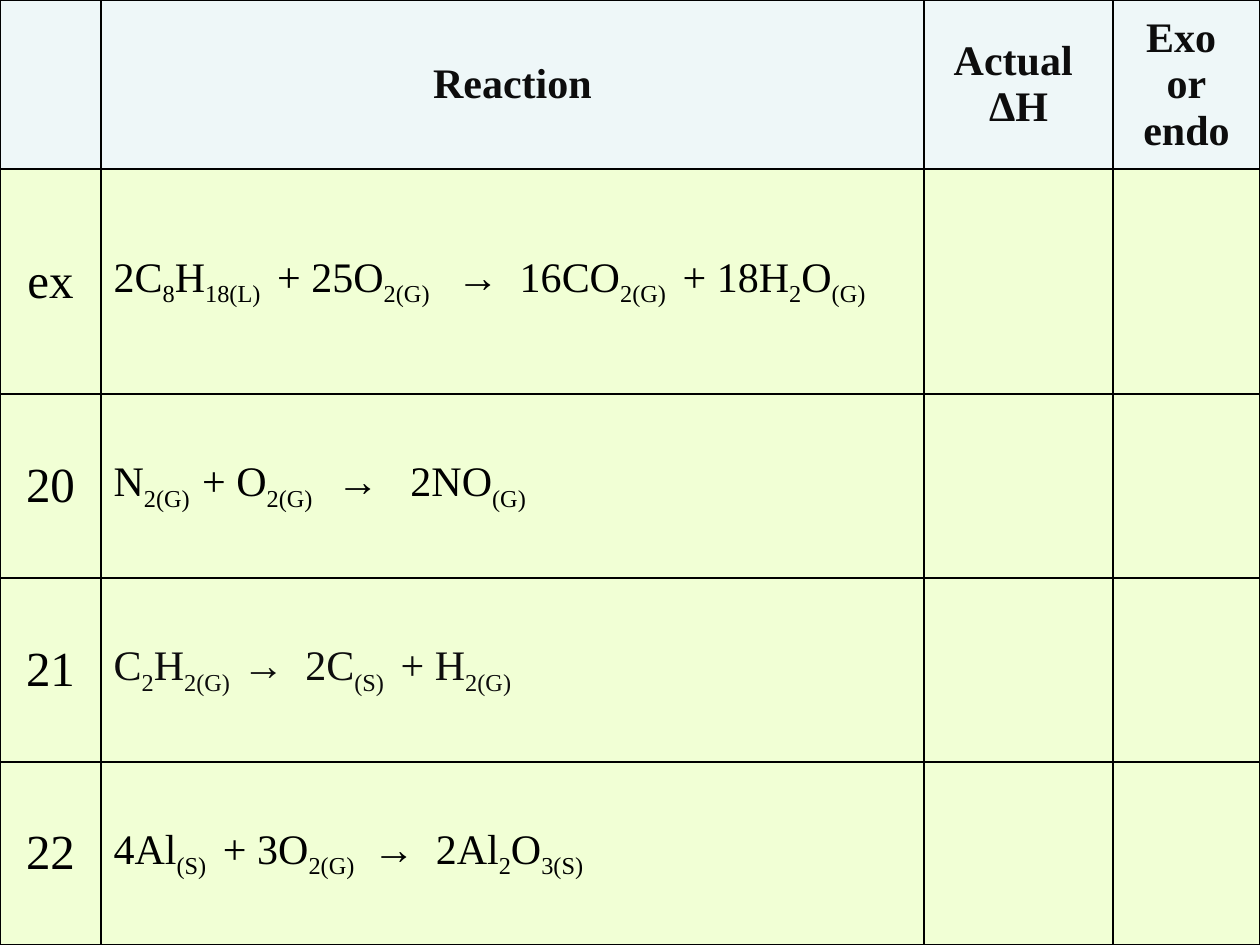
from lxml.etree import SubElement
from pptx import Presentation
from pptx.dml.color import RGBColor
from pptx.enum.text import MSO_ANCHOR, PP_ALIGN
from pptx.oxml.ns import qn
from pptx.util import Emu, Pt

PX = 914400 / 126
COLUMN_WIDTHS = [101, 823, 189, 147]
ROW_HEIGHTS = [169, 225, 184, 184, 183]
HEADINGS = ["", "Reaction", "Actual \nΔH", "Exo \nor\nendo"]
# In each equation, every second part between bars is a subscript.
REACTIONS = [
    ("ex", "2C|8|H|18(L) | + 25O|2(G) |  →  16CO|2(G) | + 18H|2|O|(G)", "000000"),
    ("20", "N|2(G)  |+ O|2(G)    |→   2NO|(G)", "000000"),
    ("21", "C|2|H|2(G)  |→  2C|(S) | + H|2(G)", "0D0D0D"),
    ("22", "4Al|(S) | + 3O|2(G)   |→  2Al|2|O|3(S)", "000000"),
]


def px(length):
    return Emu(round(length * PX))


def add_border(cell):
    """Draw a 1 pt black line on all four sides; call before filling the cell."""
    properties = cell._tc.get_or_add_tcPr()
    for side in ("lnL", "lnR", "lnT", "lnB"):
        line = SubElement(properties, qn(f"a:{side}"), w=str(Pt(1)))
        line_fill = SubElement(line, qn("a:solidFill"))
        SubElement(line_fill, qn("a:srgbClr"), val="000000")


presentation = Presentation()
presentation.slide_width, presentation.slide_height = px(1260), px(945)
slide = presentation.slides.add_slide(presentation.slide_layouts[6])

table = slide.shapes.add_table(
    len(ROW_HEIGHTS), len(COLUMN_WIDTHS), 0, 0, px(1260), px(945)
).table
table.first_row = table.horz_banding = False
for column, width in zip(table.columns, COLUMN_WIDTHS):
    column.width = px(width)
for row, height in zip(table.rows, ROW_HEIGHTS):
    row.height = px(height)

rows = [(HEADINGS, "0D0D0D")]
rows += [([number, equation, "", ""], color) for number, equation, color in REACTIONS]

for row_index, (texts, color) in enumerate(rows):
    is_header = row_index == 0
    for column_index, text in enumerate(texts):
        cell = table.cell(row_index, column_index)
        add_border(cell)
        cell.fill.solid()
        cell.fill.fore_color.rgb = RGBColor.from_string("EEF7F8" if is_header else "F1FFD5")
        cell.vertical_anchor = MSO_ANCHOR.MIDDLE

        is_number = column_index == 0
        paragraph = cell.text_frame.paragraphs[0]
        paragraph.alignment = PP_ALIGN.CENTER if is_header or is_number else PP_ALIGN.LEFT
        paragraph.font.name = "Times New Roman"
        paragraph.font.size = Pt(28 if is_number else 24)
        paragraph.font.bold = is_header
        paragraph.font.color.rgb = RGBColor.from_string("000000" if is_number else color)

        if is_header:
            paragraph.text = text
        elif text:
            for part_index, part in enumerate(text.split("|")):
                run = paragraph.add_run()
                run.text = part
                if part_index % 2:
                    run.font._element.set("baseline", "-25000")

presentation.save("out.pptx")
